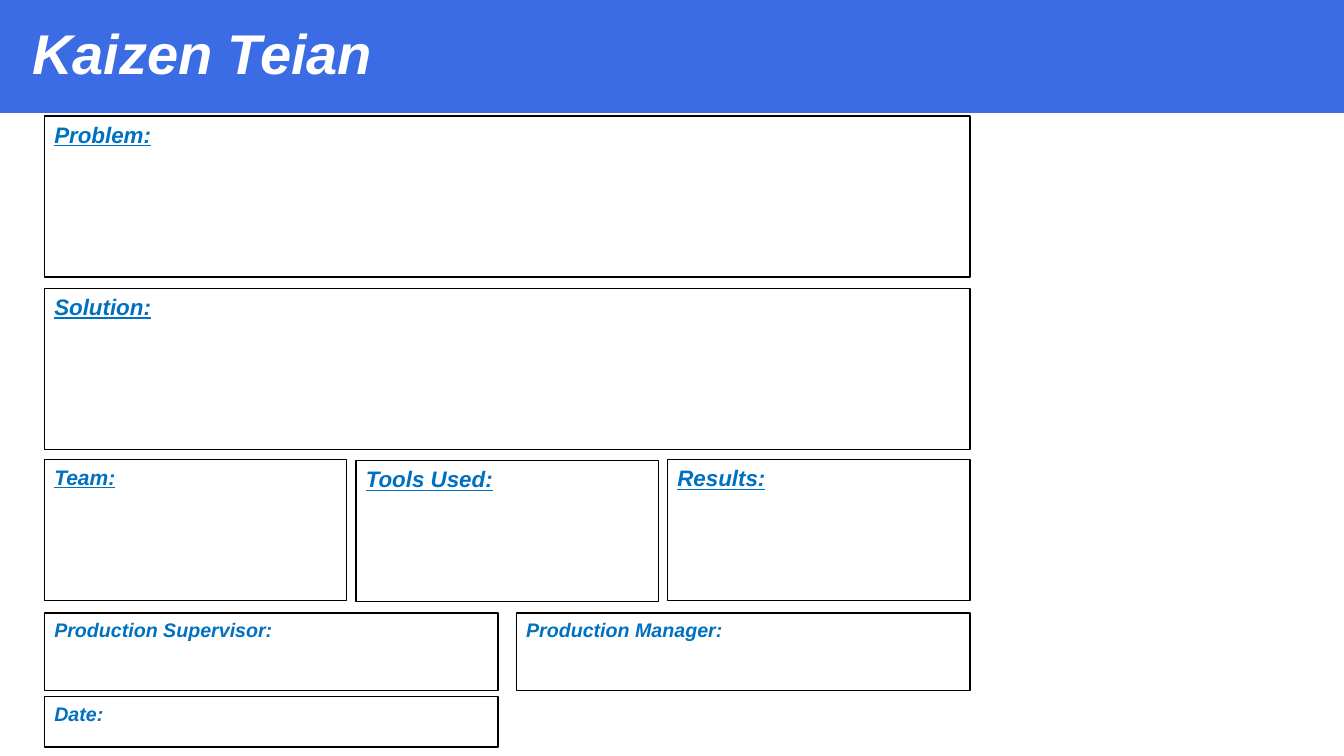
from dataclasses import dataclass

from pptx import Presentation
from pptx.dml.color import RGBColor
from pptx.enum.shapes import MSO_SHAPE
from pptx.enum.text import MSO_ANCHOR, PP_ALIGN
from pptx.text.text import TextFrame
from pptx.util import Inches, Pt

BANNER_BLUE = RGBColor(0x3B, 0x6C, 0xE3)
LABEL_BLUE = RGBColor(0x00, 0x70, 0xC0)
BLACK = RGBColor(0, 0, 0)
WHITE = RGBColor(0xFF, 0xFF, 0xFF)

LEFT = 0.44
FORM_WIDTH = 9.18


@dataclass(frozen=True)
class Field:
    label: str
    left: float
    top: float
    width: float
    height: float
    size: float = 16
    underline: bool = True


def column_left(column: int, count: int, width: float) -> float:
    """Left edge of one of count equal boxes spread over the form width."""
    return LEFT + column * (FORM_WIDTH - width) / (count - 1)


FIELDS = [
    Field("Problem:", LEFT, 1.15, FORM_WIDTH, 1.6),
    Field("Solution:", LEFT, 2.86, FORM_WIDTH, 1.6),
    Field("Team:", column_left(0, 3, 3), 4.56, 3, 1.4, size=15),
    Field("Tools Used:", column_left(1, 3, 3), 4.57, 3, 1.4),
    Field("Results:", column_left(2, 3, 3), 4.56, 3, 1.4),
    Field("Production Supervisor:", column_left(0, 2, 4.5), 6.08, 4.5, 0.77, 14, False),
    Field("Production Manager:", column_left(1, 2, 4.5), 6.08, 4.5, 0.77, 14, False),
    Field("Date:", LEFT, 6.91, 4.5, 0.5, 14, False),
]


def write(frame: TextFrame, text: str, *, size: float, color: RGBColor,
          underline: bool = False, anchor: MSO_ANCHOR = MSO_ANCHOR.TOP,
          line_spacing: float = 1.0) -> None:
    frame.word_wrap = True
    frame.vertical_anchor = anchor
    paragraph = frame.paragraphs[0]
    paragraph.alignment = PP_ALIGN.LEFT
    paragraph.line_spacing = line_spacing
    run = paragraph.add_run()
    run.text = text
    font = run.font
    font.name = "Arial"
    font.size = Pt(size)
    font.bold = font.italic = True
    font.underline = underline
    font.color.rgb = color


def draw_banner(slide, width: int) -> None:
    banner = slide.shapes.add_shape(MSO_SHAPE.RECTANGLE, 0, 0, width, Inches(1.12))
    banner.shadow.inherit = False
    banner.fill.solid()
    banner.fill.fore_color.rgb = BANNER_BLUE
    banner.line.fill.background()
    title = slide.shapes.add_textbox(Inches(0.22), Inches(0.2), Inches(3.98), Inches(0.72))
    write(title.text_frame, "Kaizen Teian", size=40, color=WHITE,
          anchor=MSO_ANCHOR.MIDDLE, line_spacing=0.9)


def draw_field(slide, field: Field) -> None:
    box = slide.shapes.add_shape(
        MSO_SHAPE.RECTANGLE, Inches(field.left), Inches(field.top),
        Inches(field.width), Inches(field.height))
    box.shadow.inherit = False
    box.fill.background()
    box.line.color.rgb = BLACK
    box.line.width = Pt(1)
    write(box.text_frame, field.label, size=field.size, color=LABEL_BLUE,
          underline=field.underline)


def main() -> None:
    deck = Presentation()
    deck.slide_width = Inches(13.33)
    deck.slide_height = Inches(7.5)
    slide = deck.slides.add_slide(deck.slide_layouts[6])
    draw_banner(slide, deck.slide_width)
    for field in FIELDS:
        draw_field(slide, field)
    deck.save("out.pptx")


if __name__ == "__main__":
    main()
